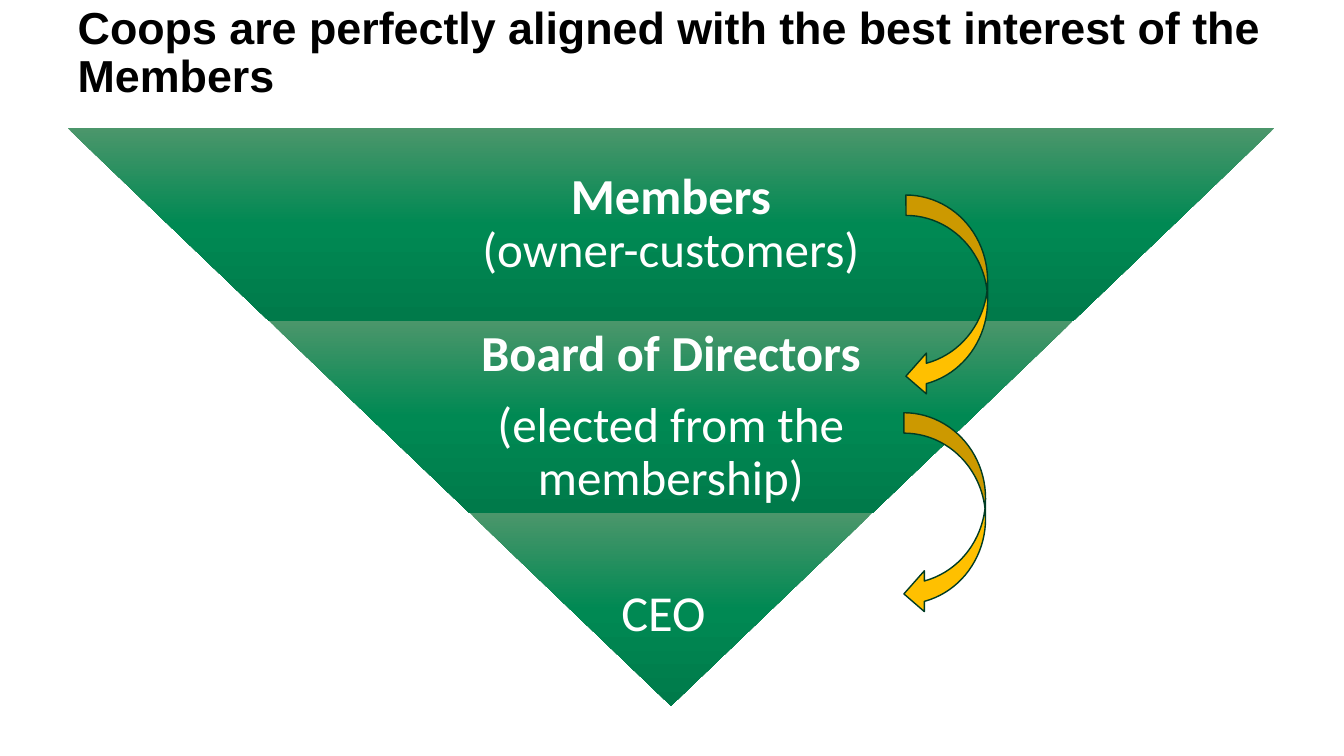
import pptx
import pptx.dml.color
import pptx.enum.shapes
import pptx.enum.text
import pptx.oxml
import pptx.oxml.ns
import pptx.util

Inches = pptx.util.Inches
Pt = pptx.util.Pt
Shape = pptx.enum.shapes.MSO_SHAPE
Align = pptx.enum.text.PP_ALIGN


def color(code):
    return pptx.dml.color.RGBColor.from_string(code)


class Deck:
    head = "Arial"
    body = "Calibri"
    ink = "000000"
    pale = "FFFFFF"
    gold = "FFC000"
    edge = "003C24"
    shades = [(0, "4B966B"), (50, "008953"), (100, "007A4A")]

    def __init__(self):
        self.prs = pptx.Presentation()
        self.prs.slide_width = Inches(13.33)
        self.prs.slide_height = Inches(7.5)
        self.slide = self.prs.slides.add_slide(self.prs.slide_layouts[5])

    def frame(self, shape, pads):
        """Set wrapping, middle anchor and insets; return the text frame."""
        frame = shape.text_frame
        frame.word_wrap = True
        frame.auto_size = pptx.enum.text.MSO_AUTO_SIZE.NONE
        frame.vertical_anchor = pptx.enum.text.MSO_ANCHOR.MIDDLE
        frame.margin_left, frame.margin_top, frame.margin_right, frame.margin_bottom = map(Inches, pads)
        return frame

    def run(self, para, text, size, bold, font, code):
        run = para.add_run()
        run.text = text
        run.font.size = Pt(size)
        run.font.bold = bold
        run.font.name = font
        run.font.color.rgb = color(code)

    def title(self, text, box):
        shape = self.slide.shapes.title
        shape.left, shape.top, shape.width, shape.height = map(Inches, box)
        para = self.frame(shape, (0.1, 0.05, 0.1, 0)).paragraphs[0]
        para.alignment = Align.LEFT
        para.line_spacing = 0.9
        self.run(para, text, 32, True, self.head, self.ink)

    def shade(self, shape):
        """Fill with the green gradient, light at the top whatever the rotation."""
        stops = "".join(
            f'<a:gs pos="{pos * 1000}"><a:srgbClr val="{code}"/></a:gs>'
            for pos, code in self.shades)
        fill = pptx.oxml.parse_xml(
            f'<a:gradFill {pptx.oxml.ns.nsdecls("a")} rotWithShape="0">'
            f'<a:gsLst>{stops}</a:gsLst><a:lin ang="5400000" scaled="0"/></a:gradFill>')
        shape.element.spPr.find(pptx.oxml.ns.qn("a:prstGeom")).addnext(fill)

    def tier(self, box):
        shape = self.slide.shapes.add_shape(Shape.TRAPEZOID, *map(Inches, box))
        shape.adjustments[0] = 1.044
        shape.rotation = 180
        shape.shadow.inherit = False
        self.shade(shape)
        shape.line.fill.background()

    def label(self, paras, box):
        """Write paragraphs of lines, each line a list of (text, size, bold)."""
        shape = self.slide.shapes.add_textbox(*map(Inches, box))
        frame = self.frame(shape, [0.05] * 4)
        for i, lines in enumerate(paras):
            para = frame.add_paragraph() if i else frame.paragraphs[0]
            para.alignment = Align.CENTER
            para.line_spacing = 0.9
            para.space_after = Pt(12.5)
            for j, runs in enumerate(lines):
                if j:
                    para.add_line_break()
                for text, size, bold in runs:
                    self.run(para, text, size, bold, self.body, self.pale)

    def arrow(self, left, top):
        shape = self.slide.shapes.add_shape(
            Shape.CURVED_DOWN_ARROW, Inches(left), Inches(top), Inches(2), Inches(0.81))
        shape.rotation = 90
        shape.shadow.inherit = False
        shape.fill.solid()
        shape.fill.fore_color.rgb = color(self.gold)
        shape.line.color.rgb = color(self.edge)
        shape.line.width = Pt(1)


def main():
    deck = Deck()
    deck.title("Coops are perfectly aligned with the best interest of the Members",
               (0.67, 0.15, 11.98, 0.72))
    left, top, wide, high = 0.67, 1.27, 11.97, 1.91
    step = wide / 6
    tiers = [
        (7.78, [[[("Members", 36, True)], [("(owner-customers)", 35, False)]]]),
        (5.19, [[[("Board of Directors", 36, True)]],
                [[("(elected from the membership)", 35, False)]]]),
        (3.99, [[[("CEO", 36, False), (" ", 48, False)]]]),
    ]
    for i, (span, paras) in enumerate(tiers):
        y = top + i * high
        deck.tier((left + i * step, y, wide - 2 * i * step, high))
        deck.label(paras, (left + (wide - span) / 2, y, span, high))
    for x, y in [(8.39, 2.53), (8.37, 4.69)]:
        deck.arrow(x, y)
    deck.prs.save("out.pptx")


if __name__ == "__main__":
    main()
